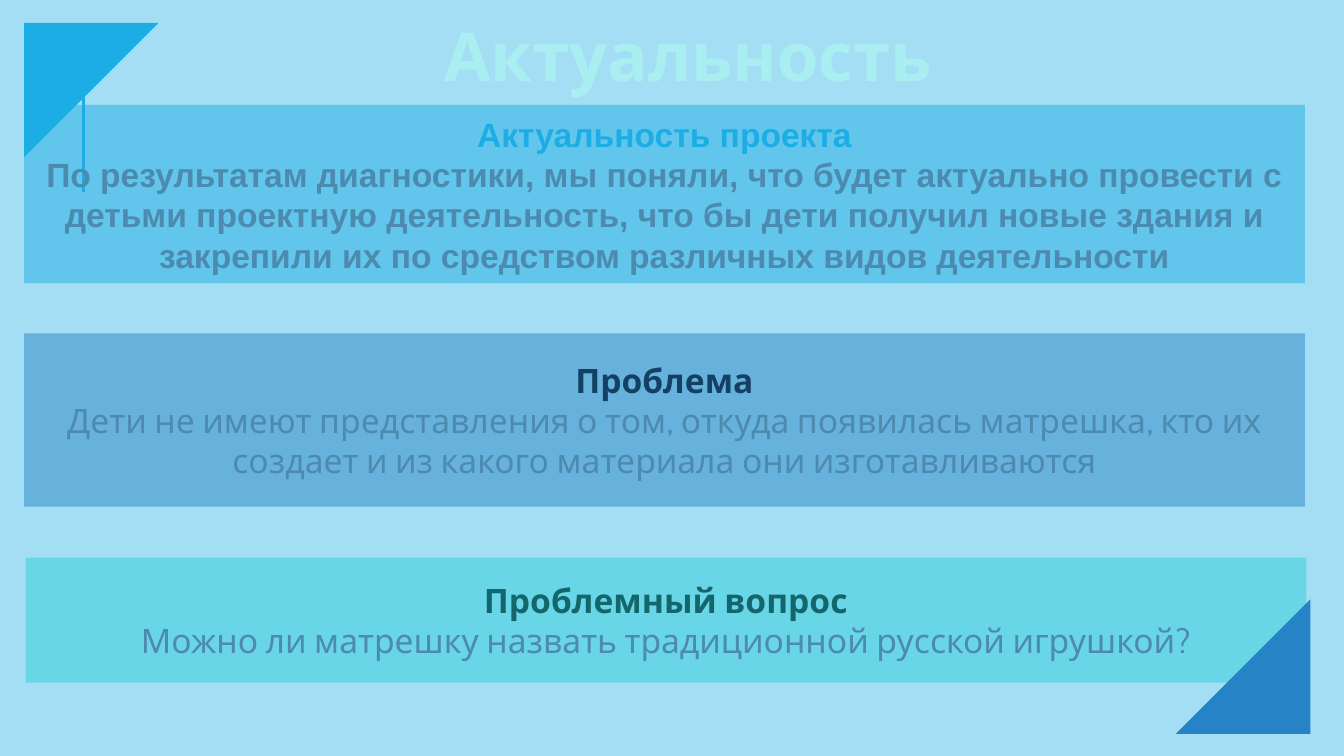
from lxml.etree import SubElement
from pptx import Presentation
from pptx.dml.color import RGBColor
from pptx.enum.shapes import MSO_CONNECTOR, MSO_SHAPE
from pptx.enum.text import MSO_ANCHOR, PP_ALIGN
from pptx.oxml.ns import qn
from pptx.util import Inches, Pt

THEME = {
    "background": "A4DEF4", "sky": "1CADE4", "blue": "2683C6", "teal": "27CED7",
    "title": "A9EFF2", "body": "4D8AB0", "navy": "134163", "pine": "13676C",
    "title_size": 36, "text_size": 18, "font": "Cabin", "plain_font": "Arial",
    "panel_opacity": 48,
}
TITLE = "Актуальность"
PANELS = [
    {"heading": "Актуальность проекта",
     "body": "По результатам диагностики, мы поняли, что будет актуально провести с детьми "
             "проектную деятельность, что бы дети получил новые здания и закрепили их "
             "по средством различных видов деятельности",
     "box": (0.18, 0.78, 9.53, 1.33), "fill": "sky", "accent": "sky",
     "font": "plain_font", "bold_body": True},
    {"heading": "Проблема",
     "body": "Дети не имеют представления о том, откуда появилась матрешка, "
             "кто их создает и из какого материала они изготавливаются",
     "box": (0.18, 2.48, 9.53, 1.29), "fill": "blue", "accent": "navy",
     "font": "font", "bold_body": False},
    {"heading": "Проблемный вопрос",
     "body": "Можно ли матрешку назвать традиционной русской игрушкой?",
     "box": (0.19, 4.15, 9.53, 0.93), "fill": "teal", "accent": "pine",
     "font": "font", "bold_body": False},
]
CORNERS = [((0.18, 0.17, 1, 1), 90, "sky"), ((8.75, 4.46, 1, 1), 270, "blue")]


def color(name):
    """Return the theme colour with this name."""
    return RGBColor.from_string(THEME[name])


def write(paragraph, text, *, fill, size="text_size", font="font", bold=False):
    """Write centred text into a paragraph."""
    paragraph.alignment = PP_ALIGN.CENTER
    run = paragraph.add_run()
    run.text = text
    run.font.name = THEME[font]
    run.font.size = Pt(THEME[size])
    run.font.bold = bold
    run.font.color.rgb = color(fill)


def add_block(slide, preset, box, fill, opacity=100):
    """Add a borderless filled shape."""
    block = slide.shapes.add_shape(preset, *map(Inches, box))
    block.shadow.inherit = False
    block.line.fill.background()
    block.fill.solid()
    block.fill.fore_color.rgb = color(fill)
    if opacity < 100:
        tint = block.fill._xPr.find(qn("a:solidFill"))[0]
        SubElement(tint, qn("a:alpha"), val=str(opacity * 1000))
    return block


def add_panel(slide, panel):
    """Add a translucent panel with its heading and body."""
    block = add_block(slide, MSO_SHAPE.RECTANGLE, panel["box"], panel["fill"],
                      THEME["panel_opacity"])
    frame = block.text_frame
    frame.word_wrap = True
    frame.vertical_anchor = MSO_ANCHOR.MIDDLE
    write(frame.paragraphs[0], panel["heading"], fill=panel["accent"],
          font=panel["font"], bold=True)
    write(frame.add_paragraph(), panel["body"], fill="body",
          font=panel["font"], bold=panel["bold_body"])


def add_title(slide):
    """Add the slide title."""
    title = slide.shapes.add_textbox(Inches(2.62), Inches(0.03), Inches(5), Inches(0.75))
    frame = title.text_frame
    frame.word_wrap = True
    frame.vertical_anchor = MSO_ANCHOR.MIDDLE
    write(frame.paragraphs[0], TITLE, fill="title", size="title_size", bold=True)


def add_rule(slide):
    """Add the thin vertical rule beside the corner."""
    rule = slide.shapes.add_connector(
        MSO_CONNECTOR.STRAIGHT, Inches(0.62), Inches(1.43), Inches(0.62), Inches(0.68))
    rule.line.color.rgb = color("sky")
    rule.line.width = Pt(1.5)
    SubElement(rule._element.spPr, qn("a:effectLst"))


def main():
    """Build and save the slide."""
    deck = Presentation()
    deck.slide_width = Inches(10)
    deck.slide_height = deck.slide_width * 9 // 16
    slide = deck.slides.add_slide(deck.slide_layouts[6])
    slide.background.fill.solid()
    slide.background.fill.fore_color.rgb = color("background")
    add_rule(slide)
    for panel in PANELS:
        add_panel(slide, panel)
    for box, angle, fill in CORNERS:
        add_block(slide, MSO_SHAPE.RIGHT_TRIANGLE, box, fill).rotation = angle
    add_title(slide)
    deck.save("out.pptx")


if __name__ == "__main__":
    main()
